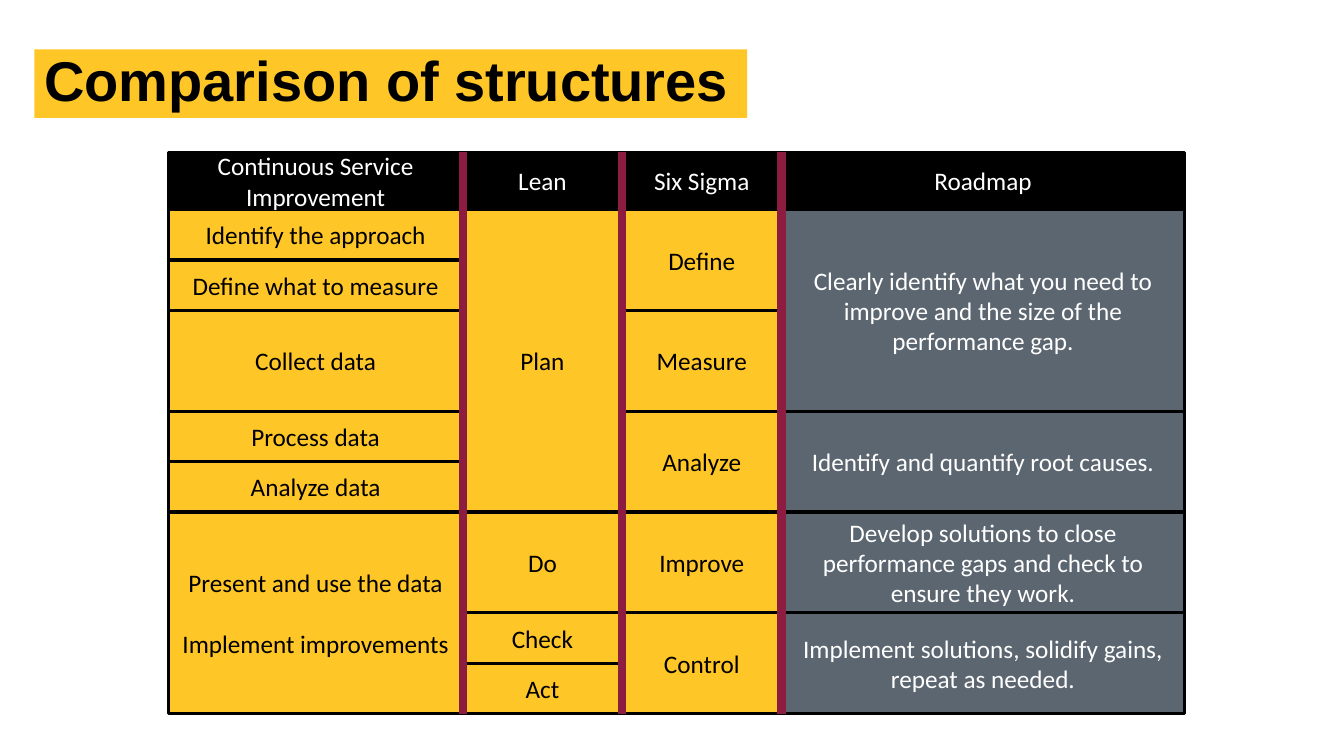
from lxml import etree
from pptx import Presentation
from pptx.dml.color import RGBColor
from pptx.enum.shapes import MSO_CONNECTOR, MSO_SHAPE
from pptx.enum.text import MSO_ANCHOR, PP_ALIGN
from pptx.oxml.ns import qn
from pptx.util import Inches, Pt

RECTANGLE = MSO_SHAPE.RECTANGLE
STRAIGHT = MSO_CONNECTOR.STRAIGHT
MIDDLE = MSO_ANCHOR.MIDDLE
LEFT = PP_ALIGN.LEFT
CENTER = PP_ALIGN.CENTER

GOLD = RGBColor(0xFF, 0xC6, 0x27)
GREY = RGBColor(0x5C, 0x66, 0x70)
MAROON = RGBColor(0x8C, 0x1D, 0x40)
BLACK = RGBColor(0, 0, 0)
WHITE = RGBColor(0xFF, 0xFF, 0xFF)

COLUMN_EDGES = [1.67, 4.59, 6.17, 7.75, 11.75]
HEADER_TOP = 1.51
BODY_TOP = 2.08
ROW_HEIGHT = 0.5
ROW_COUNT = 10

COLUMNS = [
    ("Continuous Service Improvement", GOLD, BLACK, [
        (1, "Identify the approach"),
        (1, "Define what to measure"),
        (2, "Collect data"),
        (1, "Process data"),
        (1, "Analyze data"),
        (4, "Present and use the data\nImplement improvements"),
    ]),
    ("Lean", GOLD, BLACK, [(6, "Plan"), (2, "Do"), (1, "Check"), (1, "Act")]),
    ("Six Sigma", GOLD, BLACK, [
        (2, "Define"),
        (2, "Measure"),
        (2, "Analyze"),
        (2, "Improve"),
        (2, "Control"),
    ]),
    ("Roadmap", GREY, WHITE, [
        (4, "Clearly identify what you need to improve and the size of the performance gap."),
        (2, "Identify and quantify root causes."),
        (2, "Develop solutions to close performance gaps and check to ensure they work."),
        (2, "Implement solutions, solidify gains, repeat as needed."),
    ]),
]


def write_text(shape, text, font="Calibri", size=18, color=BLACK, bold=False,
               align=CENTER, line_spacing=1.0, gap=22):
    frame = shape.text_frame
    frame.word_wrap = True
    frame.vertical_anchor = MIDDLE
    for index, line in enumerate(text.split("\n")):
        paragraph = frame.add_paragraph() if index else frame.paragraphs[0]
        paragraph.alignment = align
        paragraph.line_spacing = line_spacing
        if index:
            paragraph.space_before = Pt(gap)
        run = paragraph.add_run()
        run.text = line
        run.font.name = font
        run.font.size = Pt(size)
        run.font.bold = bold
        run.font.color.rgb = color


def row_top(row):
    return BODY_TOP + row * ROW_HEIGHT


class ComparisonSlide:
    def __init__(self, presentation):
        self.slide = presentation.slides.add_slide(presentation.slide_layouts[6])
        self.grid = self.slide.shapes.add_group_shape()

    def rectangle(self, shapes, left, top, width, height, fill):
        shape = shapes.add_shape(RECTANGLE, Inches(left), Inches(top),
                                 Inches(width), Inches(height))
        shape.shadow.inherit = False
        shape.fill.solid()
        shape.fill.fore_color.rgb = fill
        shape.line.fill.background()
        return shape

    def title(self, text):
        shape = self.rectangle(self.slide.shapes, 0.34, 0.49, 7.07, 0.68, GOLD)
        write_text(shape, text, font="Arial", size=40, bold=True,
                   align=LEFT, line_spacing=0.9)

    def cell(self, column, top, bottom, text, fill, color):
        left, right = COLUMN_EDGES[column:column + 2]
        shape = self.rectangle(self.grid.shapes, left, top, right - left, bottom - top, fill)
        shape.line.color.rgb = BLACK
        shape.line.width = Pt(2.25)
        write_text(shape, text, color=color)

    def column(self, index, heading, fill, color, stages):
        row = 0
        for span, text in stages:
            self.cell(index, row_top(row), row_top(row + span), text, fill, color)
            row += span
        self.cell(index, HEADER_TOP, BODY_TOP, heading, BLACK, WHITE)

    def divider(self, x):
        connector = self.grid.shapes.add_connector(
            STRAIGHT, Inches(x), Inches(HEADER_TOP), Inches(x), Inches(row_top(ROW_COUNT)))
        connector.line.color.rgb = MAROON
        connector.line.width = Pt(6)
        etree.SubElement(connector._element.spPr, qn("a:effectLst"))


def main():
    presentation = Presentation()
    presentation.slide_width = Inches(13.33)
    presentation.slide_height = Inches(7.5)
    comparison = ComparisonSlide(presentation)
    comparison.title("Comparison of structures")
    for index, column in enumerate(COLUMNS):
        comparison.column(index, *column)
    for edge in COLUMN_EDGES[1:-1]:
        comparison.divider(edge)
    presentation.save("out.pptx")


if __name__ == "__main__":
    main()
